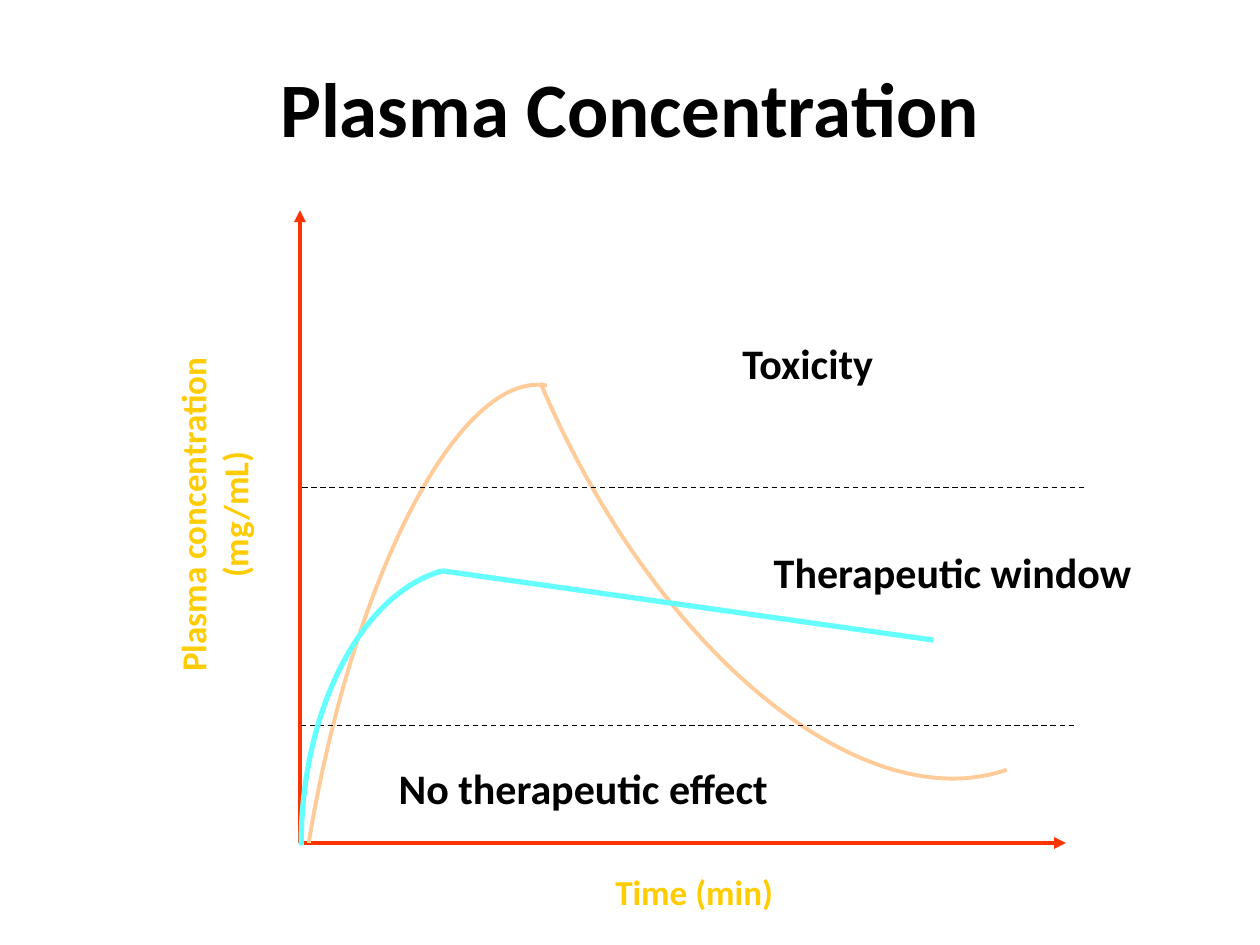
import pptx
import pptx.util
import pptx.dml.color
import pptx.enum.dml
import pptx.enum.shapes
import pptx.enum.text
import pptx.oxml
import pptx.oxml.ns

Pt = pptx.util.Pt
RGBColor = pptx.dml.color.RGBColor
qn = pptx.oxml.ns.qn

BLACK = RGBColor(0x00, 0x00, 0x00)
RED = RGBColor(0xFF, 0x33, 0x00)
PEACH = RGBColor(0xFF, 0xCC, 0x99)
YELLOW = RGBColor(0xFF, 0xCC, 0x00)
CYAN = RGBColor(0x66, 0xFF, 0xFF)
FONT = "Calibri"

TITLE = "Plasma Concentration"
TITLE_BOX = (36, 15.84, 648, 90)
ORIGIN = (171.4, 481.7)
AXIS_ENDS = [(171.4, 120.2), (609.1, 481.7)]
THRESHOLDS = [((172.8, 278.6), (620.6, 278.6)), ((172.1, 414.7), (614.2, 414.7))]
FAST_DOSE = [
    [(312.5, 220.3), (262.8, 211.7), (201.6, 329), (176.4, 481.7)],
    [(575.3, 439.9), (491.8, 468.7), (373.7, 371.5), (308.9, 218.9)],
]
SLOW_RISE = [(252.7, 326.2), (206.6, 339.1), (172.1, 405.4), (172.1, 483.1)]
SLOW_END = (533.5, 365.8)
LABELS = [
    ("Plasma concentration\n(mg/mL)", (10.8, 266.4, 222.5, 55.4), 20, YELLOW, 270),
    ("Time (min)", (339.1, 493.9, 115.2, 31.7), 20, YELLOW, 0),
    ("Therapeutic window", (421.9, 308.9, 244.8, 36), 24, BLACK, 0),
    ("Toxicity", (409, 189.4, 105.1, 36), 24, BLACK, 0),
    ("No therapeutic effect", (206.6, 432, 253.4, 36), 24, BLACK, 0),
]


def format_text(tf, size, color):
    for p in tf.paragraphs:
        p.alignment = pptx.enum.text.PP_ALIGN.CENTER
        for r in p.runs:
            r.font.name = FONT
            r.font.size = Pt(size)
            r.font.bold = True
            r.font.color.rgb = color


def add_line(shapes, start, end, color, width, dashed=False, arrow=False):
    sp = shapes.add_connector(
        pptx.enum.shapes.MSO_CONNECTOR.STRAIGHT, *map(Pt, start + end))
    sp.line.color.rgb = color
    sp.line.width = Pt(width)
    if dashed:
        sp.line.dash_style = pptx.enum.dml.MSO_LINE.DASH
    if arrow:
        tail = sp.line._get_or_add_ln().makeelement(qn("a:tailEnd"), {"type": "triangle"})
        sp.line._get_or_add_ln().append(tail)
    props = sp._element.spPr
    props.append(props.makeelement(qn("a:effectLst"), {}))


def add_curve(shapes, points, color, width):
    start, *rest = [tuple(map(Pt, point)) for point in points]
    builder = shapes.build_freeform(*start)
    builder.add_line_segments(rest, close=False)
    sp = builder.convert_to_shape()
    sp.fill.background()
    sp.line.color.rgb = color
    sp.line.width = Pt(width)
    sp.shadow.inherit = False
    outline = next(sp._element.iter(qn("a:path")))
    bezier = outline.makeelement(qn("a:cubicBezTo"), {})
    for segment in outline.findall(qn("a:lnTo")):
        bezier.append(segment[0])
        outline.remove(segment)
    outline.append(bezier)


def add_label(shapes, text, box, size, color, rotation):
    sp = shapes.add_textbox(*map(Pt, box))
    sp.rotation = rotation
    tf = sp.text_frame
    tf.text = text
    tf.word_wrap = False
    tf.auto_size = pptx.enum.text.MSO_AUTO_SIZE.SHAPE_TO_FIT_TEXT
    format_text(tf, size, color)


def main():
    prs = pptx.Presentation()
    prs.slide_width, prs.slide_height = Pt(720), Pt(540)
    s = prs.slides.add_slide(prs.slide_layouts[5])
    shapes = s.shapes

    title = shapes.title
    title.left, title.top, title.width, title.height = map(Pt, TITLE_BOX)
    title.text_frame.text = TITLE
    title.text_frame.vertical_anchor = pptx.enum.text.MSO_ANCHOR.MIDDLE
    format_text(title.text_frame, 44, BLACK)

    for end in AXIS_ENDS:
        add_line(shapes, ORIGIN, end, RED, 2.25, arrow=True)
    for points in FAST_DOSE:
        add_curve(shapes, points, PEACH, 2.25)
    for start, end in THRESHOLDS:
        add_line(shapes, start, end, BLACK, 0.75, dashed=True)
    for label in LABELS:
        add_label(shapes, *label)
    add_curve(shapes, SLOW_RISE, CYAN, 3)
    add_line(shapes, SLOW_RISE[0], SLOW_END, CYAN, 3)

    prs.save("out.pptx")


if __name__ == "__main__":
    main()
